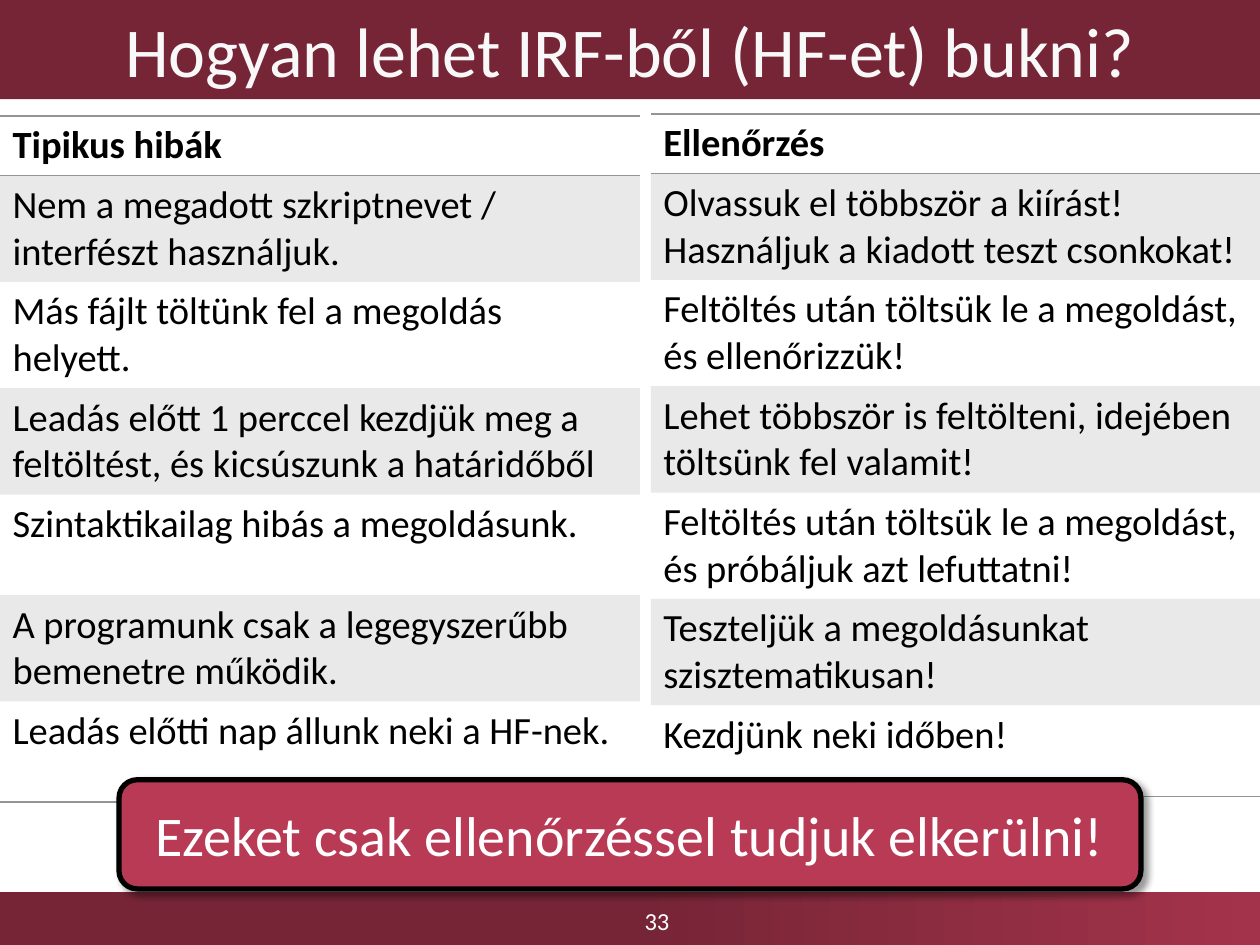
from lxml import etree
from pptx import Presentation
from pptx.dml.color import RGBColor
from pptx.enum.shapes import MSO_SHAPE
from pptx.enum.text import MSO_ANCHOR, MSO_AUTO_SIZE, PP_ALIGN
from pptx.oxml import parse_xml
from pptx.oxml.ns import nsdecls, qn
from pptx.util import Cm, Pt

RECT, ROUND = MSO_SHAPE.RECTANGLE, MSO_SHAPE.ROUNDED_RECTANGLE
MIDDLE, CENTER = MSO_ANCHOR.MIDDLE, PP_ALIGN.CENTER
FIXED = MSO_AUTO_SIZE.NONE
WINE, ROSE, GREY = "762536", "B83A55", "929598"
PLAIN = "{2D5ABB26-0587-4C30-8999-92F81FD0307C}"

FAULTS = [
    "Tipikus hibák",
    "Nem a megadott szkriptnevet / interfészt használjuk.",
    "Más fájlt töltünk fel a megoldás helyett.",
    "Leadás előtt 1 perccel kezdjük meg a feltöltést, és kicsúszunk a határidőből",
    "Szintaktikailag hibás a megoldásunk.",
    "A programunk csak a legegyszerűbb bemenetre működik.",
    "Leadás előtti nap állunk neki a HF-nek.",
]
CHECKS = [
    "Ellenőrzés",
    "Olvassuk el többször a kiírást!\nHasználjuk a kiadott teszt csonkokat!",
    "Feltöltés után töltsük le a megoldást, és ellenőrizzük!",
    "Lehet többször is feltölteni, idejében töltsünk fel valamit!",
    "Feltöltés után töltsük le a megoldást, és próbáljuk azt lefuttatni!",
    "Teszteljük a megoldásunkat szisztematikusan!",
    "Kezdjünk neki időben!",
]


def color(code):
    """Turn a hex string into a colour."""
    return RGBColor.from_string(code)


def write(frame, text, size, code, align=None, bold=False):
    """Fill a text frame and set the font of its paragraphs."""
    frame.text = text
    for para in frame.paragraphs:
        para.alignment = align
        font = para.font
        font.name, font.size, font.bold = "Calibri", Pt(size), bold
        font.color.rgb = color(code)


def center(shape, text, size, code):
    """Write one centred line into a shape."""
    frame = shape.text_frame
    frame.word_wrap = True
    frame.auto_size = FIXED
    frame.vertical_anchor = MIDDLE
    write(frame, text, size, code, CENTER)


def add_title(slide, box, text):
    """Place the title bar in the box."""
    title = slide.shapes.title
    title.left, title.top, title.width, title.height = map(Cm, box)
    title.fill.solid()
    title.fill.fore_color.rgb = color(WINE)
    center(title, text, 40, "F8F8F8")


def add_footer(slide, box, number):
    """Place the footer band with the page number in the box."""
    left, top, width, height = box
    band = slide.shapes.add_shape(RECT, *map(Cm, box))
    band.shadow.inherit = False
    band.line.fill.background()
    band.fill.gradient()
    band.fill.gradient_angle = 0
    for stop, place, code in zip(band.fill.gradient_stops, (0.5, 1), (WINE, "A3334B")):
        stop.position = place
        stop.color.rgb = color(code)
    label = slide.shapes.add_textbox(
        Cm(left + 9.12), Cm(top + 0.08), Cm(8.25), Cm(height - 0.08))
    center(label, number, 14, "FFFFFF")


def add_rule(cell, side):
    """Draw a thin grey line on one side of a cell."""
    rule = parse_xml(
        f'<a:{side} {nsdecls("a")} w="12700"><a:solidFill>'
        f'<a:srgbClr val="{GREY}"/></a:solidFill></a:{side}>')
    spot = 1 if side == "lnB" and cell.find(qn("a:lnT")) is not None else 0
    cell.insert(spot, rule)


def add_list(slide, box, rows, heights):
    """Place a one-column striped table in the box."""
    left, top, width = box
    grid = slide.shapes.add_table(
        len(rows), 1, Cm(left), Cm(top), Cm(width), Cm(sum(heights)))
    table = grid.table
    table.horz_banding = False
    table._tbl.tblPr.find(qn("a:tableStyleId")).text = PLAIN
    last = len(rows) - 1
    for i, (text, height) in enumerate(zip(rows, heights)):
        table.rows[i].height = Cm(height)
        cell = table.cell(i, 0)
        write(cell.text_frame, text, 22, "000000", bold=i == 0)
        props = cell._tc.get_or_add_tcPr()
        if i % 2:
            cell.fill.solid()
            cell.fill.fore_color.rgb = color(GREY)
            tint = props.find(".//" + qn("a:srgbClr"))
            etree.SubElement(tint, qn("a:alpha")).set("val", "20000")
        else:
            cell.fill.background()
        if i == 0:
            add_rule(props, "lnT")
        if i in (0, last):
            add_rule(props, "lnB")


def add_callout(slide, box, text):
    """Place the rounded, shadowed message in the box."""
    shape = slide.shapes.add_shape(ROUND, *map(Cm, box))
    shape.fill.solid()
    shape.fill.fore_color.rgb = color(ROSE)
    shape.line.color.rgb = color("000000")
    shape.line.width = Pt(3)
    shape.shadow.inherit = False
    effect = shape._element.spPr.find(qn("a:effectLst"))
    effect.append(parse_xml(
        f'<a:outerShdw {nsdecls("a")} blurRad="50800" dist="38100" dir="2700000" '
        'algn="tl" rotWithShape="0"><a:srgbClr val="000000">'
        '<a:alpha val="40000"/></a:srgbClr></a:outerShdw>'))
    center(shape, text, 32, "FFFFFF")


def main():
    """Build the slide and save it."""
    deck = Presentation()
    deck.slide_width, deck.slide_height = Cm(25.4), Cm(19.05)
    slide = deck.slides.add_slide(deck.slide_layouts[5])
    add_footer(slide, (0, 17.98, 25.4, 1.07), "33")
    add_title(slide, (0, 0, 25.4, 2), "Hogyan lehet IRF-ből (HF-et) bukni?")
    add_list(slide, (0, 2.34, 12.9), FAULTS, [1.2] + [2.03] * 6)
    add_list(slide, (13.12, 2.3, 12.28), CHECKS,
             [1.2] + [2.1] * 4 + [1.84] * 2)
    add_callout(slide, (2.4, 15.72, 20.6, 2.2),
                "Ezeket csak ellenőrzéssel tudjuk elkerülni!")
    deck.save("out.pptx")


if __name__ == "__main__":
    main()
